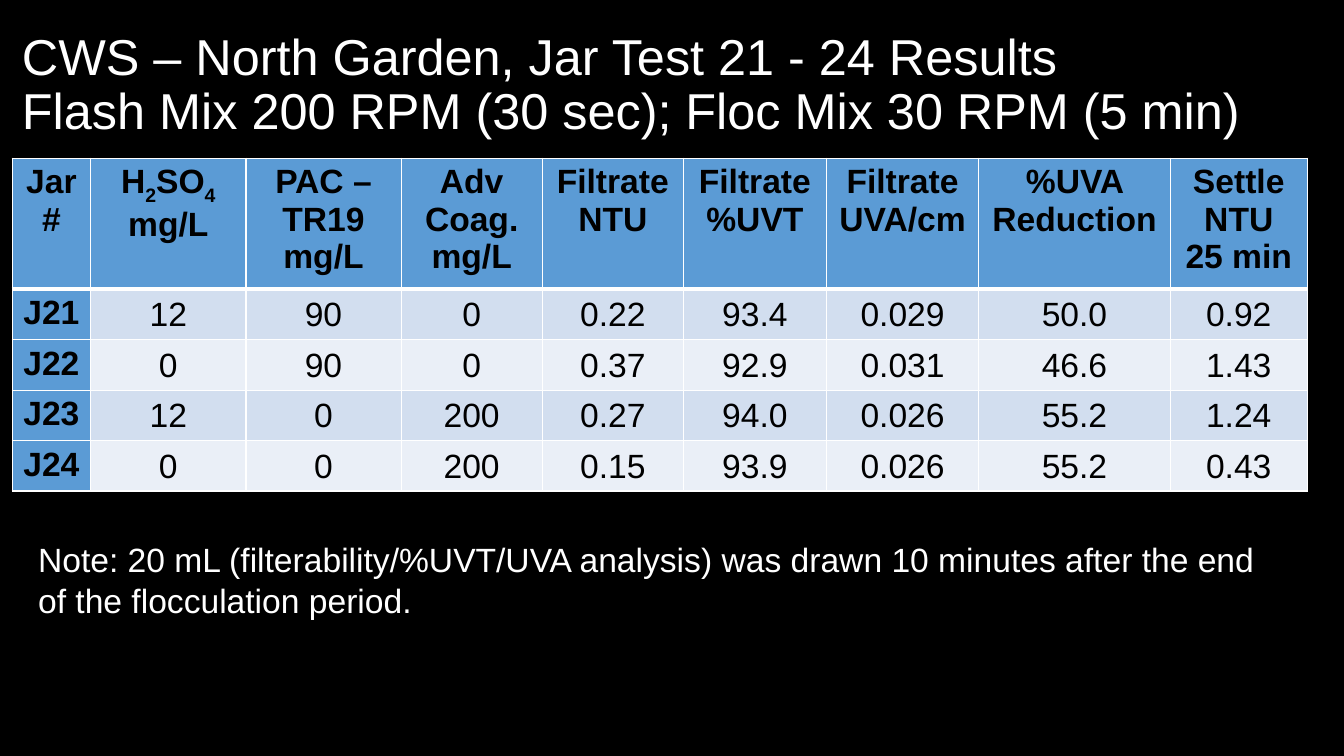
import pptx
import pptx.util
import pptx.dml.color
import pptx.enum.text
import lxml.etree
from pptx.oxml.ns import qn

RGBColor = pptx.dml.color.RGBColor
Align = pptx.enum.text.PP_ALIGN
Anchor = pptx.enum.text.MSO_ANCHOR

BLACK = RGBColor(0x00, 0x00, 0x00)
WHITE = RGBColor(0xFF, 0xFF, 0xFF)
HEADER_BLUE = RGBColor(0x5B, 0x9B, 0xD5)
BAND_DARK = RGBColor(0xD2, 0xDE, 0xEF)
BAND_LIGHT = RGBColor(0xEA, 0xEF, 0xF7)

TITLE = ("CWS – North Garden, Jar Test 21 - 24 Results\v"
         "Flash Mix 200 RPM (30 sec); Floc Mix 30 RPM (5 min)")
NOTE = ("Note: 20 mL (filterability/%UVT/UVA analysis) was drawn 10 minutes after the end \n"
        "of the flocculation period.")
HEADERS = ["Jar#", "H_2SO_4\nmg/L", "PAC – TR19\nmg/L", "Adv\nCoag.\nmg/L", "Filtrate\nNTU",
           "Filtrate\n%UVT", "Filtrate\nUVA/cm", "%UVA Reduction", "Settle\nNTU\n25 min"]
RESULTS = [
    ["J21", "12", "90", "0", "0.22", "93.4", "0.029", "50.0", "0.92"],
    ["J22", "0", "90", "0", "0.37", "92.9", "0.031", "46.6", "1.43"],
    ["J23", "12", "0", "200", "0.27", "94.0", "0.026", "55.2", "1.24"],
    ["J24", "0", "0", "200", "0.15", "93.9", "0.026", "55.2", "0.43"],
]
COLUMN_WIDTHS = [5.85, 11.55, 11.55, 10.5, 10.5, 10.65, 11.33, 14.25, 10.2]
ROW_HEIGHTS = [16.27] + [6.27] * len(RESULTS)


def write_text(frame, text, size=24, color=BLACK, bold=False, align=Align.LEFT,
               spacing=1.0, font="Arial"):
    def add_span(para, words, subscript=False):
        span = para.add_run()
        span.text = words
        span.font.name = font
        span.font.size = pptx.util.Pt(size)
        span.font.bold = bold
        span.font.color.rgb = color
        if subscript:
            span.font._element.set("baseline", "-25000")

    for index, paragraph in enumerate(text.split("\n")):
        para = frame.add_paragraph() if index else frame.paragraphs[0]
        para.alignment = align
        para.line_spacing = spacing
        for number, line in enumerate(paragraph.split("\v")):
            if number:
                para.add_line_break()
            first, *marked = line.split("_")
            add_span(para, first)
            for piece in marked:
                add_span(para, piece[0], subscript=True)
                if piece[1:]:
                    add_span(para, piece[1:])


class SlideBuilder:
    def __init__(self, deck, background):
        self.page = deck.slides.add_slide(deck.slide_layouts[6])
        self.column = deck.slide_width / 100
        self.row = deck.slide_height / 100
        self.page.background.fill.solid()
        self.page.background.fill.fore_color.rgb = background

    def place(self, left, top, width, height):
        return (round(left * self.column), round(top * self.row),
                round(width * self.column), round(height * self.row))

    def text(self, text, area, anchor=Anchor.TOP, wrap=True, **style):
        box = self.page.shapes.add_textbox(*self.place(*area))
        box.text_frame.word_wrap = wrap
        box.text_frame.vertical_anchor = anchor
        write_text(box.text_frame, text, **style)

    def border(self, cell, **widths):
        properties = cell._tc.get_or_add_tcPr()
        for index, (side, width) in enumerate(widths.items()):
            line = lxml.etree.Element(qn("a:ln" + side), w=str(pptx.util.Pt(width)))
            fill = lxml.etree.SubElement(line, qn("a:solidFill"))
            lxml.etree.SubElement(fill, qn("a:srgbClr"), val=str(WHITE))
            properties.insert(index, line)

    def table(self, cells, left, top, widths, heights):
        area = self.place(left, top, sum(widths), sum(heights))
        table = self.page.shapes.add_table(len(cells), len(widths), *area).table
        for column, width in zip(table.columns, widths):
            column.width = round(width * self.column)
        for row, height in zip(table.rows, heights):
            row.height = round(height * self.row)
        for i, values in enumerate(cells):
            for j, value in enumerate(values):
                self.cell(table.cell(i, j), value, i, j)

    def cell(self, cell, value, i, j):
        heading = i == 0 or j == 0
        cell.fill.solid()
        cell.fill.fore_color.rgb = HEADER_BLUE if heading else BAND_DARK if i % 2 else BAND_LIGHT
        if not heading:
            cell.vertical_anchor = Anchor.MIDDLE
            cell.margin_left = cell.margin_right = cell.margin_top = pptx.util.Inches(0.01)
            cell.margin_bottom = 0
        write_text(cell.text_frame, value, bold=heading, align=Align.CENTER)
        self.border(cell, L=1, R=1, T=3 if i == 1 else 1, B=1 if i else 3)


deck = pptx.Presentation()
deck.slide_width = pptx.util.Inches(13.33)
deck.slide_height = pptx.util.Inches(7.5)
slide = SlideBuilder(deck, BLACK)
slide.text(TITLE, (0.9, 1.73, 97.75, 19.33), anchor=Anchor.MIDDLE,
           size=36, color=WHITE, spacing=0.9)
slide.table([HEADERS] + RESULTS, 0.9, 20.93, COLUMN_WIDTHS, ROW_HEIGHTS)
slide.text(NOTE, (2.1, 70.67, 93.6, 12.13), wrap=False, color=WHITE)
deck.save("out.pptx")
